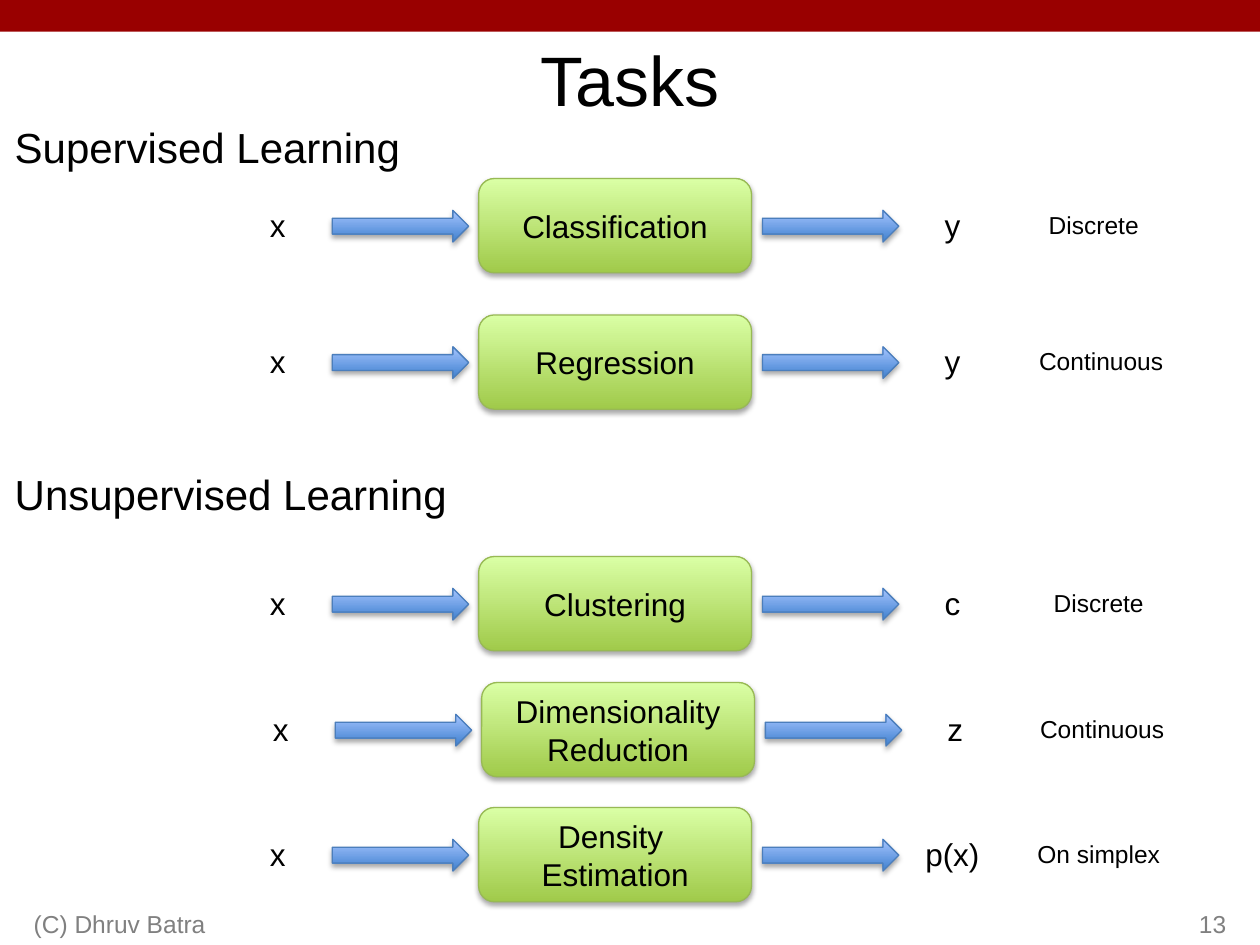
from lxml.etree import SubElement
from pptx import Presentation
from pptx.dml.color import RGBColor
from pptx.enum.shapes import MSO_SHAPE
from pptx.enum.text import MSO_ANCHOR, MSO_AUTO_SIZE, PP_ALIGN
from pptx.oxml.ns import qn
from pptx.util import Cm, Pt

GREEN = ("A0CA4A", "DAFFA5", "98B955")
BLUE = ("3F80CE", "A4C4FF", "4B7EBC")
BOX_H = 1.9


def rgb(value):
    """Turn a hex string into a colour."""
    return RGBColor.from_string(value)


def write(tf, text, size, color="000000", align=PP_ALIGN.CENTER):
    """Write lines of text into one paragraph, run by run."""
    p = tf.paragraphs[0]
    p.alignment = align
    for i, line in enumerate(text.split("\n")):
        if i:
            p.add_line_break()
        r = p.add_run()
        r.text = line
        r.font.name = "Arial"
        r.font.size = Pt(size)
        r.font.color.rgb = rgb(color)


def add_label(s, box, text, size, color="000000", align=PP_ALIGN.CENTER,
              anchor=MSO_ANCHOR.TOP, wrap=True):
    """Add a text box that fills the given box."""
    tf = s.shapes.add_textbox(*map(Cm, box)).text_frame
    tf.word_wrap = wrap
    tf.vertical_anchor = anchor
    if not wrap:
        tf.auto_size = MSO_AUTO_SIZE.SHAPE_TO_FIT_TEXT
    write(tf, text, size, color, align)


def add_glossy(s, kind, box, colors):
    """Add a shape with a vertical gradient, a thin outline and a soft shadow."""
    bottom, top, line = colors
    sp = s.shapes.add_shape(kind, *map(Cm, box))
    sp.fill.gradient()
    sp.fill.gradient_angle = 90
    for stop, color, position in zip(sp.fill.gradient_stops, (bottom, top), (0, 1)):
        stop.color.rgb = rgb(color)
        stop.position = position
    sp.line.color.rgb = rgb(line)
    sp.line.width = Pt(0.75)
    sp.shadow.inherit = False
    effects = sp.element.spPr.find(qn("a:effectLst"))
    shadow = SubElement(effects, qn("a:outerShdw"), blurRad=str(Pt(3.1)),
                        dist=str(Pt(1.8)), dir="5400000", rotWithShape="0")
    black = SubElement(shadow, qn("a:srgbClr"), val="000000")
    SubElement(black, qn("a:alpha"), val="35000")
    return sp


def add_header(s, left, top, width):
    """Add the red band and the slide title."""
    band = s.shapes.add_shape(MSO_SHAPE.RECTANGLE, *map(Cm, (left, top, width, 0.64)))
    band.shadow.inherit = False
    band.fill.solid()
    band.fill.fore_color.rgb = rgb("990000")
    band.line.fill.background()
    add_label(s, (left + 1.9, top + 0.64, width - 3.8, 1.9), "Tasks", 40,
              anchor=MSO_ANCHOR.MIDDLE)


def add_footer(s, left, top, width, height):
    """Add the credit on the left and the slide number on the right."""
    for x, w, text, align in ((left, 8.05, "(C) Dhruv Batra", PP_ALIGN.LEFT),
                              (left + width - 5.28, 5.28, "13", PP_ALIGN.RIGHT)):
        add_label(s, (x, top, w, height), text, 14, "808080", align, MSO_ANCHOR.BOTTOM)


def add_task(s, left, top, task, output, output_w, note, note_w, note_x):
    """Add one row: input, arrow, task, arrow, output and the kind of output."""
    box = add_glossy(s, MSO_SHAPE.ROUNDED_RECTANGLE,
                     (left + 4.47, top, 5.5, BOX_H), GREEN)
    tf = box.text_frame
    tf.word_wrap = True
    tf.margin_top = tf.margin_bottom = 0
    tf.vertical_anchor = MSO_ANCHOR.MIDDLE
    write(tf, task, 18)
    for x in (1.52, 10.19):
        add_glossy(s, MSO_SHAPE.RIGHT_ARROW, (left + x, top + 0.64, 2.75, 0.64), BLUE)
    for center, w, h, text, size in ((0.42, 0.84, 1.02, "x", 18),
                                     (14.02, output_w, 1.02, output, 18),
                                     (note_x, note_w, 0.86, note, 14)):
        y = top + (BOX_H - h) / 2 - 0.02
        add_label(s, (left + center - w / 2, y, w, h), text, size, wrap=False)


def add_section(s, top, width, heading, tasks):
    """Add a section heading and its task rows."""
    add_label(s, (0, top, width, 1.28), heading, 24, wrap=False)
    for left, offset, *task in tasks:
        add_task(s, left, top + offset, *task)


def main():
    """Build the slide."""
    prs = Presentation()
    prs.slide_width, prs.slide_height = Cm(25.4), Cm(19.05)
    s = prs.slides.add_slide(prs.slide_layouts[6])
    add_header(s, 0, 0, 25.4)
    add_section(s, 2.33, 8.36, "Supervised Learning", (
        (5.18, 1.27, "Classification", "y", 0.86, "Discrete", 2.34, 16.87),
        (5.18, 4.02, "Regression", "y", 0.86, "Continuous", 3.05, 17.02),
    ))
    add_section(s, 9.31, 9.3, "Unsupervised Learning", (
        (5.18, 1.91, "Clustering", "c", 0.84, "Discrete", 2.34, 16.97),
        (5.24, 4.45, "Dimensionality\nReduction", "z", 0.84, "Continuous", 3.05, 16.98),
        (5.18, 6.97, "Density \nEstimation", "p(x)", 1.63, "On simplex", 3, 16.97),
    ))
    add_footer(s, 0.43, 17.78, 24.54, 1.27)
    prs.save("out.pptx")


if __name__ == "__main__":
    main()
